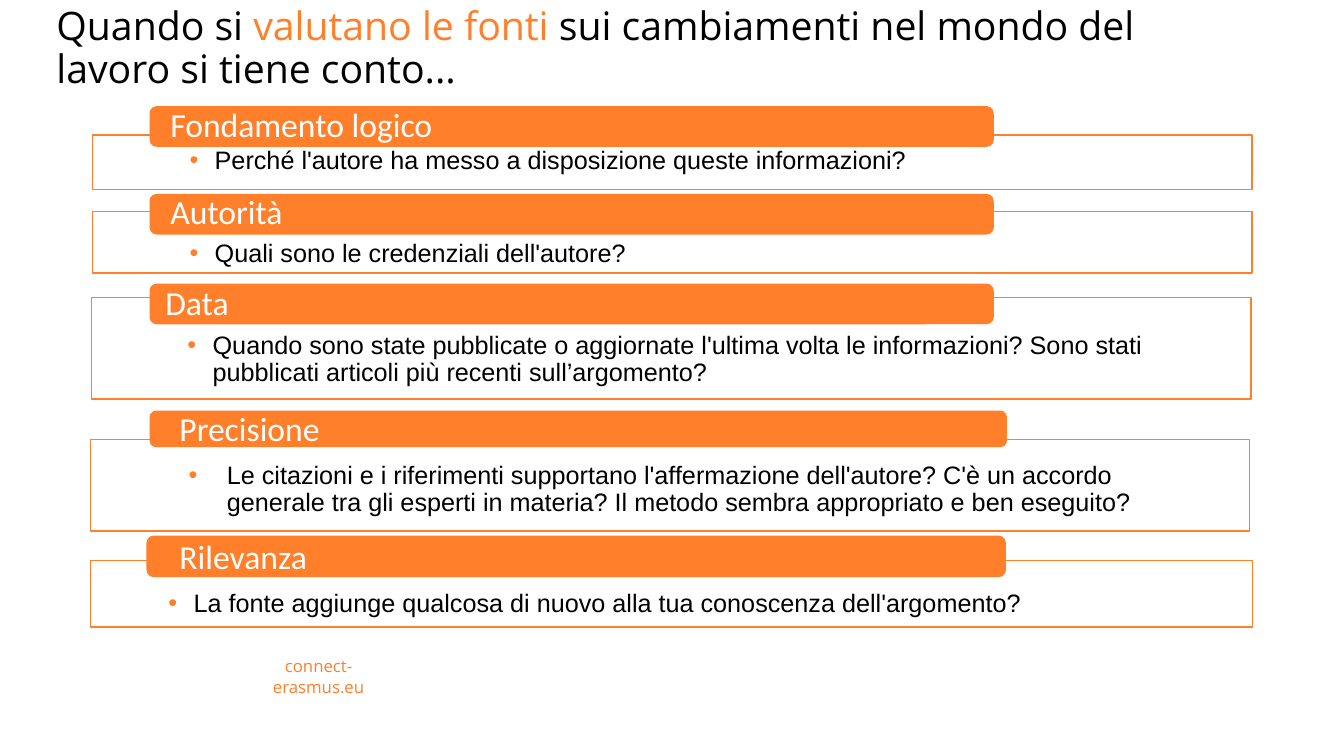
from collections import namedtuple

from lxml.etree import SubElement
from pptx import Presentation
from pptx.dml.color import RGBColor
from pptx.enum.shapes import MSO_SHAPE
from pptx.enum.text import MSO_ANCHOR, PP_ALIGN
from pptx.oxml.ns import qn
from pptx.util import Inches, Pt

ORANGE = RGBColor(0xFF, 0x7F, 0x2A)
BLACK = RGBColor(0, 0, 0)
WHITE = RGBColor(0xFF, 0xFF, 0xFF)

Box = namedtuple("Box", "left top width height")
# The tab, label and body boxes are offsets from the top left of the frame.
Section = namedtuple("Section", "heading question frame tab label body indent")

SECTIONS = [
    Section("Fondamento logico",
            "Perché l'autore ha messo a disposizione queste informazioni?",
            Box(0.92, 1.34, 11.5, 0.54), Box(0.57, -0.28, 8.36, 0.39),
            Box(0.44, -0.26, 8.33, 0.35), Box(0, 0, 11.5, 0.54), 0.25),
    Section("Autorità",
            "Quali sono le credenziali dell'autore?",
            Box(0.92, 2.1, 11.5, 0.61), Box(0.57, -0.17, 8.36, 0.39),
            Box(0.44, -0.16, 8.33, 0.35), Box(0, 0.16, 11.5, 0.49), 0.25),
    Section("Data",
            "Quando sono state pubblicate o aggiornate l'ultima volta le informazioni? "
            "Sono stati pubblicati articoli più recenti sull’argomento?",
            Box(0.91, 2.95, 11.5, 1.01), Box(0.58, -0.13, 8.36, 0.39),
            Box(0.4, -0.1, 8.33, 0.35), Box(-0.01, 0.21, 11.5, 1.01), 0.25),
    Section("Precisione",
            "Le citazioni e i riferimenti supportano l'affermazione dell'autore? "
            "C'è un accordo generale tra gli esperti in materia? "
            "Il metodo sembra appropriato e ben eseguito?",
            Box(0.9, 4.36, 11.49, 0.91), Box(0.59, -0.28, 8.49, 0.35),
            Box(0.55, -0.28, 8.36, 0.38), Box(0.01, 0.09, 11.49, 1.45), 0.38),
    Section("Rilevanza",
            "La fonte aggiunge qualcosa di nuovo alla tua conoscenza dell'argomento?",
            Box(0.9, 5.56, 11.52, 0.66), Box(0.56, -0.24, 8.51, 0.4),
            Box(0.55, -0.22, 7.4, 0.4), Box(-0.19, 0.17, 11.71, 0.82), 0.25),
]


def inches(box):
    return [Inches(length) for length in box]


def add_panel(shapes, kind, box, fill):
    panel = shapes.add_shape(kind, *inches(box))
    panel.shadow.inherit = False
    panel.fill.solid()
    panel.fill.fore_color.rgb = fill
    panel.line.color.rgb = ORANGE
    panel.line.width = Pt(1)
    return panel


def add_bullet(para, indent):
    """Give the paragraph an orange bullet with a hanging indent."""
    para.level = 1
    properties = para._p.get_or_add_pPr()
    properties.set("marL", str(Inches(indent)))
    properties.set("indent", str(-Inches(indent)))
    color = SubElement(properties, qn("a:buClr"))
    SubElement(color, qn("a:srgbClr"), val=str(ORANGE))
    SubElement(properties, qn("a:buFont"), typeface="Arial")
    SubElement(properties, qn("a:buChar"), char="•")


def add_span(para, text, *, size, font, color):
    span = para.add_run()
    span.text = text
    span.font.size = Pt(size)
    span.font.name = font
    span.font.color.rgb = color


def set_frame(frame, margins, anchor):
    """Set wrapping, anchor and the left, top, right and bottom margins."""
    frame.word_wrap = True
    frame.vertical_anchor = anchor
    (frame.margin_left, frame.margin_top,
     frame.margin_right, frame.margin_bottom) = inches(margins)


def add_text(shapes, box, text, *, size, font, color, margins=(0.1, 0.05, 0.1, 0.05),
             anchor=MSO_ANCHOR.MIDDLE, align=PP_ALIGN.LEFT, spacing=0.9, bullet_indent=None):
    frame = shapes.add_textbox(*inches(box)).text_frame
    set_frame(frame, margins, anchor)
    para = frame.paragraphs[0]
    para.alignment = align
    para.line_spacing = spacing
    if bullet_indent:
        add_bullet(para, bullet_indent)
    add_span(para, text, size=size, font=font, color=color)


def add_title(page, box):
    title = page.shapes.title
    title.left, title.top, title.width, title.height = inches(box)
    set_frame(title.text_frame, (0.1, 0.05, 0.1, 0.05), MSO_ANCHOR.BOTTOM)
    para = title.text_frame.paragraphs[0]
    para.alignment = PP_ALIGN.LEFT
    para.line_spacing = 0.9
    for text, color in [("Quando si ", BLACK),
                        ("valutano le fonti ", ORANGE),
                        ("sui cambiamenti nel mondo del lavoro si tiene conto...", BLACK)]:
        add_span(para, text, size=28, font="Open Sans", color=color)


def add_section(page, section):
    """Draw a framed question with its heading on a tab over the top edge."""
    origin = section.frame

    def within(box):
        return box._replace(left=origin.left + box.left, top=origin.top + box.top)

    shapes = page.shapes.add_group_shape().shapes
    frame = add_panel(shapes, MSO_SHAPE.RECTANGLE, origin, WHITE)
    fill_color = frame._element.spPr.find(qn("a:solidFill"))[0]
    SubElement(fill_color, qn("a:alpha"), val="89000")
    add_text(shapes, within(section.body), section.question, size=18, font="Arial",
             color=BLACK, margins=(0.96, 0.14, 0.96, 0.16), anchor=MSO_ANCHOR.TOP,
             bullet_indent=section.indent)
    add_panel(shapes, MSO_SHAPE.ROUNDED_RECTANGLE, within(section.tab), ORANGE)
    add_text(shapes, within(section.label), section.heading, size=24, font="Calibri",
             color=WHITE, margins=(0.33, 0, 0.33, 0))


def add_footer(page, box):
    add_text(page.shapes, box, "connect-erasmus.eu", size=12, font="Open Sans",
             color=ORANGE, align=PP_ALIGN.CENTER, spacing=1.0)


def main():
    deck = Presentation()
    deck.slide_width, deck.slide_height = Inches(13.33), Inches(7.5)
    page = deck.slides.add_slide(deck.slide_layouts.get_by_name("Title Only"))
    add_title(page, Box(0.46, 0.11, 11.5, 0.85))
    for section in SECTIONS:
        add_section(page, section)
    add_footer(page, Box(2.3, 6.56, 1.72, 0.3))
    deck.save("out.pptx")


if __name__ == "__main__":
    main()
